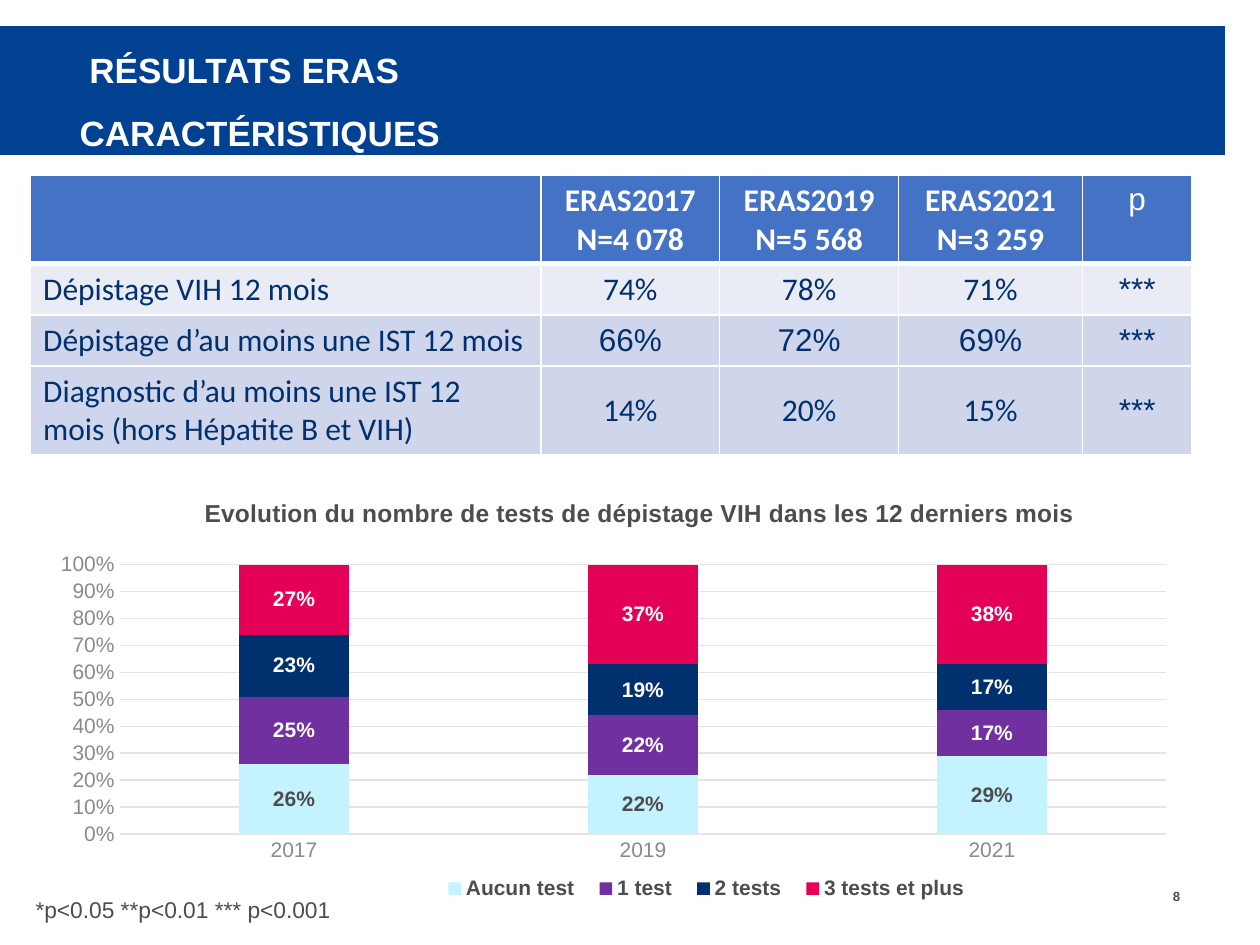
from typing import NamedTuple

from lxml import etree
from pptx import Presentation
from pptx.chart.data import CategoryChartData
from pptx.dml.color import RGBColor
from pptx.enum import chart as ch, shapes, text
from pptx.oxml import ns
from pptx.util import Pt

WHITE = RGBColor(0xFF, 0xFF, 0xFF)
BLUE = RGBColor(0x00, 0x41, 0x92)
NAVY = RGBColor(0x00, 0x31, 0x6E)
HEADER = RGBColor(0x44, 0x72, 0xC4)
PALE = RGBColor(0xE9, 0xEB, 0xF5)
BAND = RGBColor(0xCF, 0xD5, 0xEA)
DARK = RGBColor(0x4D, 0x4D, 0x4F)
GREY = RGBColor(0x8A, 0x8A, 0x8D)
GRID = RGBColor(0xE4, 0xE4, 0xE5)
CYAN = RGBColor(0xC4, 0xF2, 0xFF)
PURPLE = RGBColor(0x70, 0x30, 0xA0)
PINK = RGBColor(0xE3, 0x00, 0x56)

CENTER = text.PP_ALIGN.CENTER


class Style(NamedTuple):
    size: float
    color: RGBColor
    bold: bool = False
    name: str = "Arial"


class Box(NamedTuple):
    left: float
    top: float
    width: float
    height: float


class Row(NamedTuple):
    height: float
    fill: RGBColor
    cells: list[str]
    fonts: list[str]
    top_line: float = 1
    bottom_line: float = 1


class Series(NamedTuple):
    name: str
    values: tuple[float, ...]
    color: RGBColor
    label_color: RGBColor = WHITE


C, A = "Calibri", "Arial"
COLUMNS = [291.6, 102.2, 102.2, 105.1, 62.6]
ROWS = [
    Row(49.7, HEADER, ["", "ERAS2017\nN=4 078", "ERAS2019\nN=5 568", "ERAS2021\nN=3 259", "p"],
        [C, C, C, C, A], bottom_line=3),
    Row(29.2, PALE, ["Dépistage VIH 12 mois", "74%", "78%", "71%", "***"],
        [C, C, C, C, A], top_line=3),
    Row(29.2, BAND, ["Dépistage d’au moins une IST 12 mois", "66%", "72%", "69%", "***"],
        [C, A, A, A, A]),
    Row(50.8, BAND, ["Diagnostic d’au moins une IST 12 mois (hors Hépatite B et VIH)",
                     "14%", "20%", "15%", "***"],
        [C, C, C, C, A]),
]
SERIES = [
    Series("Aucun test", (0.26, 0.22, 0.29), CYAN, DARK),
    Series("1 test", (0.25, 0.22, 0.17), PURPLE),
    Series("2 tests", (0.23, 0.19, 0.17), NAVY),
    Series("3 tests et plus", (0.27, 0.37, 0.38), PINK),
]


def set_font(font, style: Style) -> None:
    font.size, font.bold, font.name = Pt(style.size), style.bold, style.name
    font.color.rgb = style.color


def add_run(p, words: str, style: Style) -> None:
    r = p.add_run()
    r.text = words
    set_font(r.font, style)


def add_text(s, box: Box, lines: list[str], style: Style, align=text.PP_ALIGN.LEFT,
             anchor=text.MSO_ANCHOR.TOP, wrap: bool = True, spacing: float = 1) -> None:
    tf = s.shapes.add_textbox(*map(Pt, box)).text_frame
    tf.word_wrap, tf.vertical_anchor = wrap, anchor
    tf.margin_left = tf.margin_right = Pt(3)
    tf.margin_top = tf.margin_bottom = 0
    p = tf.paragraphs[0]
    p.alignment, p.line_spacing = align, spacing
    for i, line in enumerate(lines):
        if i:
            p.add_line_break()
        add_run(p, line, style)


def set_borders(cell, row: Row) -> None:
    tc_pr = cell._tc.get_or_add_tcPr()
    for side, width in zip("LRTB", (1, 1, row.top_line, row.bottom_line)):
        ln = etree.SubElement(tc_pr, ns.qn(f"a:ln{side}"), w=str(Pt(width)))
        fill = etree.SubElement(ln, ns.qn("a:solidFill"))
        etree.SubElement(fill, ns.qn("a:srgbClr"), val=str(WHITE))


def add_results_table(s, box: Box) -> None:
    table = s.shapes.add_table(len(ROWS), len(COLUMNS), *map(Pt, box)).table
    for column, width in zip(table.columns, COLUMNS):
        column.width = Pt(width)
    for i, row in enumerate(ROWS):
        table.rows[i].height = Pt(row.height)
        header = i == 0
        for j, (words, font) in enumerate(zip(row.cells, row.fonts)):
            cell = table.cell(i, j)
            set_borders(cell, row)
            cell.fill.solid()
            cell.fill.fore_color.rgb = row.fill
            if j and not header:
                cell.vertical_anchor = text.MSO_ANCHOR.MIDDLE
            style = Style(18, WHITE if header else NAVY, header and font == C, font)
            tf = cell.text_frame
            for k, line in enumerate(words.split("\n")):
                p = tf.add_paragraph() if k else tf.paragraphs[0]
                if j:
                    p.alignment = CENTER
                if line:
                    add_run(p, line, style)


def place(element, before: str, inner: bool = False, **fractions: float) -> None:
    """Give a chart part a manual layout, in fractions of the chart."""
    for old in element.findall(ns.qn("c:layout")):
        element.remove(old)
    layout = etree.Element(ns.qn("c:layout"))
    manual = etree.SubElement(layout, ns.qn("c:manualLayout"))
    if inner:
        etree.SubElement(manual, ns.qn("c:layoutTarget"), val="inner")
    for key in ("x", "y"):
        etree.SubElement(manual, ns.qn(f"c:{key}Mode"), val="edge")
    for key, value in fractions.items():
        etree.SubElement(manual, ns.qn(f"c:{key}"), val=str(value))
    element.find(ns.qn(before)).addprevious(layout)


def add_tests_chart(s, box: Box) -> None:
    data = CategoryChartData(number_format="0%")
    data.categories = ["2017", "2019", "2021"]
    for item in SERIES:
        data.add_series(item.name, item.values)
    chart = s.shapes.add_chart(ch.XL_CHART_TYPE.COLUMN_STACKED, *map(Pt, box), data).chart
    set_font(chart.font, Style(12, DARK))

    # Title and legend
    chart.has_title = True
    add_run(chart.chart_title.text_frame.paragraphs[0],
            "Evolution du nombre de tests de dépistage VIH dans les 12 derniers mois",
            Style(14, DARK, True))
    chart.has_legend = True
    chart.legend.position = ch.XL_LEGEND_POSITION.BOTTOM
    chart.legend.include_in_layout = False
    set_font(chart.legend.font, Style(12, DARK, True))

    # Axes
    for axis in (chart.category_axis, chart.value_axis):
        axis.major_tick_mark = axis.minor_tick_mark = ch.XL_TICK_MARK.NONE
        set_font(axis.tick_labels.font, Style(12, GREY))
    value_axis = chart.value_axis
    value_axis.minimum_scale, value_axis.maximum_scale = 0, 1
    value_axis.major_unit = 0.1
    value_axis.tick_labels.number_format = "0%"
    value_axis.tick_labels.number_format_is_linked = False
    value_axis.format.line.fill.background()
    for line in (chart.category_axis.format.line, value_axis.major_gridlines.format.line):
        line.color.rgb, line.width = GRID, Pt(0.75)

    # Series
    plot = chart.plots[0]
    plot.gap_width, plot.overlap, plot.vary_by_categories = 219, 100, False
    for series, item in zip(plot.series, SERIES):
        series.format.fill.solid()
        series.format.fill.fore_color.rgb = item.color
        labels = series.data_labels
        labels.show_value = True
        labels.number_format, labels.number_format_is_linked = "0%", False
        set_font(labels.font, Style(12, item.label_color, True))

    # Positions inside the chart
    area = chart._chartSpace.chart
    place(area.find(ns.qn("c:title")), "c:overlay", x=0.14, y=0.01)
    place(area.plotArea, "c:barChart", inner=True, x=0.07, y=0.18, w=0.91, h=0.64)
    place(chart.legend._element, "c:overlay", x=0.34, y=0.91, w=0.48, h=0.08)


def main() -> None:
    prs = Presentation()
    prs.slide_width, prs.slide_height = Pt(720), Pt(540)
    s = prs.slides.add_slide(prs.slide_layouts[6])

    # Title band
    band = s.shapes.add_shape(shapes.MSO_SHAPE.RECTANGLE, 0, Pt(15), Pt(700), Pt(73.5))
    band.shadow.inherit = False
    band.fill.solid()
    band.fill.fore_color.rgb = BLUE
    band.line.fill.background()
    add_text(s, Box(42.5, 15, 538.5, 73.5), [" RÉSULTATS ERAS", "CARACTÉRISTIQUES"],
             Style(20, WHITE, True), anchor=text.MSO_ANCHOR.MIDDLE, spacing=1.5)

    # Results
    add_results_table(s, Box(17.5, 100.3, 663.7, 158.9))
    add_tests_chart(s, Box(22.3, 279.4, 657.4, 240.5))

    # Footer
    add_text(s, Box(17.3, 512, 193, 16), ["*p<0.05 **p<0.01 *** p<0.001"], Style(13, DARK))
    add_text(s, Box(658, 507.6, 19.5, 9.4), ["8"], Style(7.5, DARK, True),
             align=text.PP_ALIGN.RIGHT, wrap=False)
    prs.save("out.pptx")


if __name__ == "__main__":
    main()
